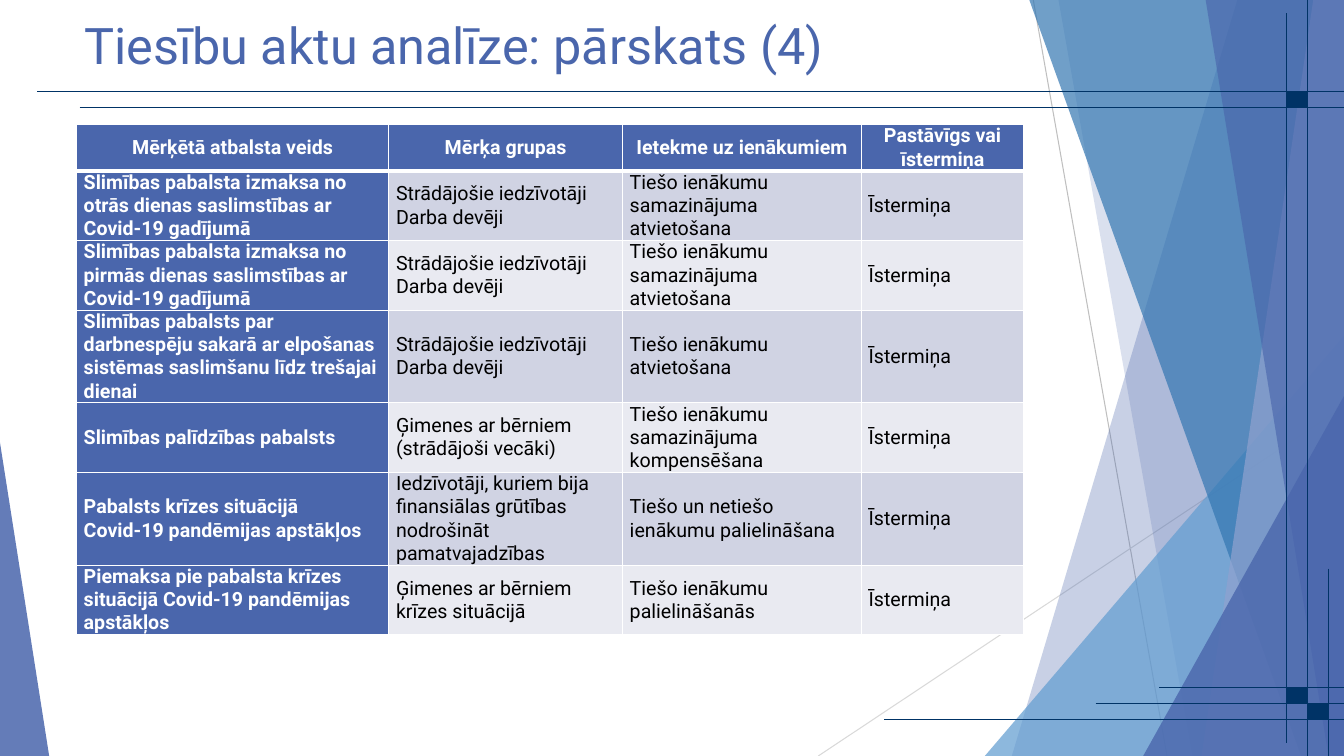
from lxml.etree import SubElement as Sub
from pptx import Presentation
from pptx.dml.color import RGBColor as RGB
from pptx.enum.shapes import MSO_CONNECTOR as Link, MSO_SHAPE as Kind
from pptx.enum.text import MSO_ANCHOR as Anchor, PP_ALIGN as Align
from pptx.oxml.ns import qn
from pptx.util import Cm, Pt

FONT = "Roboto"
BLUE = RGB(0x4A, 0x66, 0xAC)
SKY = RGB(0x62, 0x9D, 0xD1)
DEEP = RGB(0x34, 0x77, 0xB2)
PALE = RGB(0x90, 0xA2, 0xCF)
NAVY = RGB(0x00, 0x33, 0x66)
GREY = RGB(0xBF, 0xBF, 0xBF)
LIGHT = RGB(0xD9, 0xD9, 0xD9)
WHITE = RGB(0xFF, 0xFF, 0xFF)
BLACK = RGB(0, 0, 0)
BANDS = (RGB(0xE9, 0xEA, 0xF1), RGB(0xD0, 0xD3, 0xE3))

WIDE, HIGH, TOP = 33.87, 19.05, -0.03
LINE = 0.58

RAYS = [
    (26.04, 0, 29.41, HIGH, GREY),
    (WIDE, 10.24, 20.62, HIGH, LIGHT),
]
RULES = [
    (0.94, 2.31, WIDE, 2.31),
    (2.01, 2.72, WIDE, 2.72),
    (32.94, 0, 32.94, HIGH),
    (32.41, 0.33, 32.41, 18.72),
    (27.61, 17.73, WIDE, 17.73),
    (29.21, 17.32, WIDE, 17.32),
    (22.28, 18.14, WIDE, 18.14),
    (33.48, 14.33, 33.48, HIGH),
]
KNOTS = [(32.41, 2.31), (32.41, 17.32), (32.94, 17.73)]

COLS = (7.87, 5.89, 6.02, 4.09)
ROW_LINES = (2, 3, 3, 4, 3, 4, 3)
WORK = "Strādājošie iedzīvotāji\nDarba devēji"
SHORT = "Īstermiņa"
ROWS = [
    ("Mērķētā atbalsta veids", "Mērķa grupas", "Ietekme uz ienākumiem",
     "Pastāvīgs vai īstermiņa"),
    ("Slimības pabalsta izmaksa no otrās dienas saslimstības ar Covid-19 gadījumā",
     WORK, "Tiešo ienākumu samazinājuma atvietošana", SHORT),
    ("Slimības pabalsta izmaksa no pirmās dienas saslimstības ar Covid-19 gadījumā",
     WORK, "Tiešo ienākumu samazinājuma atvietošana", SHORT),
    ("Slimības pabalsts par darbnespēju sakarā ar elpošanas sistēmas saslimšanu "
     "līdz trešajai dienai", WORK, "Tiešo ienākumu atvietošana", SHORT),
    ("Slimības palīdzības pabalsts", "Ģimenes ar bērniem (strādājoši vecāki)",
     "Tiešo ienākumu samazinājuma kompensēšana", SHORT),
    ("Pabalsts krīzes situācijā Covid-19 pandēmijas apstākļos",
     "Iedzīvotāji, kuriem bija finansiālas grūtības nodrošināt pamatvajadzības",
     "Tiešo un netiešo ienākumu palielināšana", SHORT),
    ("Piemaksa pie pabalsta krīzes situācijā Covid-19 pandēmijas apstākļos",
     "Ģimenes ar bērniem krīzes situācijā", "Tiešo ienākumu palielināšanās", SHORT),
]


def add_line(slide, x1, y1, x2, y2, color):
    line = slide.shapes.add_connector(Link.STRAIGHT, Cm(x1), Cm(y1), Cm(x2), Cm(y2))
    line.line.color.rgb = color
    line.line.width = Pt(0.75)
    Sub(line._element.spPr, qn("a:effectLst"))


def tint(shape, color, alpha):
    shape.shadow.inherit = False
    shape.fill.solid()
    shape.fill.fore_color.rgb = color
    shape.line.fill.background()
    tone = shape._element.spPr.find(qn("a:solidFill"))[0]
    Sub(tone, qn("a:alpha"), val=str(alpha * 1000))


def add_pane(slide, left, foot, color, alpha):
    pen = slide.shapes.build_freeform(Cm(left), Cm(TOP))
    pen.add_line_segments(
        [(Cm(x), Cm(y)) for x, y in ((WIDE, TOP), (WIDE, HIGH), (foot, HIGH))])
    tint(pen.convert_to_shape(), color, alpha)


def add_wedge(slide, left, top, width, apex, color, alpha):
    wedge = slide.shapes.add_shape(
        Kind.ISOSCELES_TRIANGLE, Cm(left), Cm(top), Cm(width), Cm(HIGH - top))
    wedge.adjustments[0] = apex
    tint(wedge, color, alpha)


def add_knot(slide, left, top):
    knot = slide.shapes.add_shape(Kind.RECTANGLE, Cm(left), Cm(top), Cm(0.53), Cm(0.41))
    knot.shadow.inherit = False
    knot.fill.solid()
    knot.fill.fore_color.rgb = NAVY
    knot.line.color.rgb = NAVY
    knot.line.width = Pt(0.75)


def add_decor(slide):
    for ray in RAYS:
        add_line(slide, *ray)
    add_pane(slide, 31.19, 25.5, BLUE, 30)
    add_pane(slide, 26.67, 30.05, BLUE, 20)
    add_wedge(slide, 24.82, 8.46, 9.05, 1, SKY, 72)
    add_pane(slide, 25.93, 32.79, DEEP, 70)
    add_pane(slide, 33.1, 30.28, PALE, 70)
    add_pane(slide, 30.38, 33.48, BLUE, 65)
    add_wedge(slide, 28.81, 9.98, 5.06, 1, BLUE, 80)
    add_wedge(slide, 0, 11.15, 1.24, 0, BLUE, 85)
    for rule in RULES:
        add_line(slide, *rule, NAVY)
    for knot in KNOTS:
        add_knot(slide, *knot)


def style(frame, size, color, bold, align):
    for para in frame.paragraphs:
        para.alignment = align
        for run in para.runs:
            font = run.font
            font.name, font.size, font.bold = FONT, Pt(size), bold
            font.color.rgb = color


def set_title(slide, text):
    title = slide.shapes.title
    title.left, title.top = Cm(1.88), Cm(0.1)
    title.width, title.height = Cm(23.88), Cm(2.21)
    frame = title.text_frame
    frame.text = text
    frame.vertical_anchor = Anchor.MIDDLE
    frame.paragraphs[0].line_spacing = 0.9
    style(frame, 36, BLUE, False, Align.LEFT)
    slide.shapes._spTree.append(title._element)


def add_edge(cell, side, width):
    edge = Sub(cell._tc.get_or_add_tcPr(), qn("a:ln" + side), w=str(Pt(width)))
    fill = Sub(edge, qn("a:solidFill"))
    Sub(fill, qn("a:srgbClr"), val=str(WHITE))


def fill_cell(cell, text, row, col):
    head = row == 0
    dark = head or col == 0
    widths = {"L": 1, "R": 1, "T": 3 if row == 1 else 1, "B": 3 if head else 1}
    for side, width in widths.items():
        add_edge(cell, side, width)
    cell.fill.solid()
    cell.fill.fore_color.rgb = BLUE if dark else BANDS[row % 2]
    cell.margin_left = cell.margin_right = Cm(0.18)
    cell.margin_top = cell.margin_bottom = 0
    cell.vertical_anchor = Anchor.MIDDLE
    cell.text_frame.text = text
    style(cell.text_frame, 14, WHITE if dark else BLACK, dark,
          Align.CENTER if head else Align.LEFT)


def add_grid(slide):
    grid = slide.shapes.add_table(
        len(ROWS), len(COLS), Cm(1.93), Cm(3.14),
        Cm(sum(COLS)), Cm(LINE * sum(ROW_LINES))).table
    for col, width in zip(grid.columns, COLS):
        col.width = Cm(width)
    for row, lines in zip(grid.rows, ROW_LINES):
        row.height = Cm(LINE * lines)
    for row, texts in enumerate(ROWS):
        for col, text in enumerate(texts):
            fill_cell(grid.cell(row, col), text, row, col)


def main():
    deck = Presentation()
    deck.slide_width, deck.slide_height = Cm(WIDE), Cm(HIGH)
    slide = deck.slides.add_slide(deck.slide_layouts[5])
    add_decor(slide)
    set_title(slide, "Tiesību aktu analīze: pārskats (4)")
    add_grid(slide)
    deck.save("out.pptx")


if __name__ == "__main__":
    main()
